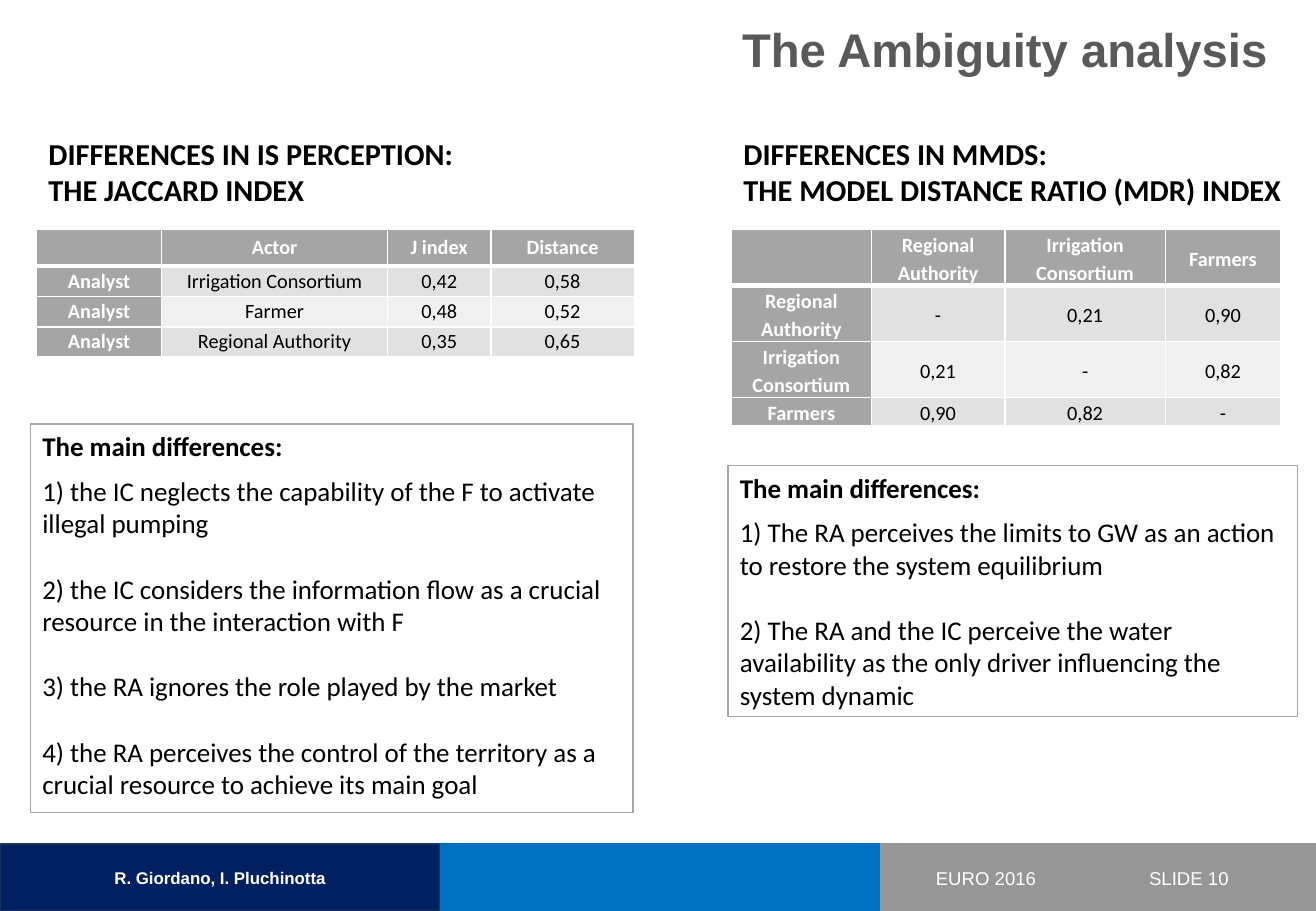
from dataclasses import dataclass

from lxml.etree import SubElement
from pptx import Presentation
from pptx.dml.color import RGBColor
from pptx.enum.shapes import MSO_SHAPE as Shp
from pptx.enum.text import MSO_ANCHOR as Anchor, PP_ALIGN as Align
from pptx.oxml.ns import qn
from pptx.util import Emu, Pt

PX = 9144
WHITE, BLACK, GREY = "FFFFFF", "000000", "A5A5A5"
BANDS = ("E1E1E1", "F0F0F0")


@dataclass(frozen=True)
class Box:
    x: int
    y: int
    w: int
    h: int

    def emu(self) -> list[Emu]:
        return [px(v) for v in (self.x, self.y, self.w, self.h)]


@dataclass(frozen=True)
class Font:
    size: int
    color: str = BLACK
    bold: bool = False
    name: str = "Calibri"


@dataclass(frozen=True)
class Bar:
    box: Box
    fill: str
    line: str
    text: str = ""


@dataclass(frozen=True)
class Heading:
    box: Box
    lines: tuple[str, ...]


@dataclass(frozen=True)
class Grid:
    x: int
    y: int
    cols: tuple[int, ...]
    rows: tuple[int, ...]
    spacing: float
    data: tuple[tuple[str, ...], ...]


@dataclass(frozen=True)
class Note:
    box: Box
    points: tuple[str, ...]


BARS = (
    Bar(Box(0, 695, 362, 55), "002060", "1A3260", "R. Giordano, I. Pluchinotta"),
    Bar(Box(363, 695, 362, 55), "0070C0", "0070C0"),
    Bar(Box(725, 695, 358, 55), "969696", "969696"),
)
FOOTERS = ("EURO 2016", "SLIDE 10")
HEADINGS = (
    Heading(Box(30, 106, 370, 71),
            ("DIFFERENCES IN IS PERCEPTION:", "THE JACCARD INDEX")),
    Heading(Box(602, 106, 481, 71),
            ("DIFFERENCES IN MMDS:", "THE MODEL DISTANCE RATIO (MDR) INDEX")),
)
GRIDS = (
    Grid(30, 189, (103, 186, 85, 118), (29, 25, 25, 25), 1.0, (
        ("", "Actor", "J index", "Distance"),
        ("Analyst", "Irrigation Consortium", "0,42", "0,58"),
        ("Analyst", "Farmer", "0,48", "0,52"),
        ("Analyst", "Regional Authority", "0,35", "0,65"),
    )),
    Grid(602, 189, (115, 110, 132, 95), (45, 45, 45, 22), 1.15, (
        ("", "Regional Authority", "Irrigation Consortium", "Farmers"),
        ("Regional Authority", "-", "0,21", "0,90"),
        ("Irrigation Consortium", "0,21", "-", "0,82"),
        ("Farmers", "0,90", "0,82", "-"),
    )),
)
NOTES = (
    Note(Box(25, 349, 496, 320), (
        "1) the IC neglects the capability of the F to activate illegal pumping",
        "2) the IC considers the information flow as a crucial resource in the interaction with F",
        "3) the RA ignores the role played by the market",
        "4) the RA perceives the control of the territory as a crucial resource to achieve its main goal",
    )),
    Note(Box(599, 383, 469, 207), (
        "1) The RA perceives the limits to GW as an action to restore the system equilibrium",
        "2) The RA and the IC perceive the water availability as the only driver influencing the system dynamic",
    )),
)


def px(n: int) -> Emu:
    return Emu(n * PX)


def rgb(color: str) -> RGBColor:
    return RGBColor.from_string(color)


def add_run(p, text: str, font: Font, align=Align.LEFT) -> None:
    p.alignment = align
    r = p.add_run()
    r.text = text
    f = r.font
    f.name, f.size, f.bold = font.name, Pt(font.size), font.bold
    f.color.rgb = rgb(font.color)


def add_rect(s, box: Box, line: str, width: float, fill: str = ""):
    sp = s.shapes.add_shape(Shp.RECTANGLE, *box.emu())
    sp.shadow.inherit = False
    if fill:
        sp.fill.solid()
        sp.fill.fore_color.rgb = rgb(fill)
    else:
        sp.fill.background()
    sp.line.color.rgb = rgb(line)
    sp.line.width = Pt(width)
    return sp


def add_text(s, box: Box, lines: tuple[str, ...], font: Font,
             align=Align.LEFT, anchor=Anchor.TOP) -> None:
    tf = s.shapes.add_textbox(*box.emu()).text_frame
    tf.word_wrap = True
    tf.vertical_anchor = anchor
    for i, line in enumerate(lines):
        add_run(tf.add_paragraph() if i else tf.paragraphs[0], line, font, align)


def add_borders(cell, top: int, bottom: int) -> None:
    tc_pr = cell._tc.get_or_add_tcPr()
    for i, (side, width) in enumerate((("L", 1), ("R", 1), ("T", top), ("B", bottom))):
        ln = SubElement(tc_pr, qn(f"a:ln{side}"), w=str(Pt(width)))
        fill = SubElement(ln, qn("a:solidFill"))
        SubElement(fill, qn("a:srgbClr"), val=WHITE)
        tc_pr.insert(i, ln)


def add_grid(s, grid: Grid) -> None:
    box = Box(grid.x, grid.y, sum(grid.cols), sum(grid.rows))
    table = s.shapes.add_table(len(grid.rows), len(grid.cols), *box.emu()).table
    for col, w in zip(table.columns, grid.cols):
        col.width = px(w)
    for i, (row, h) in enumerate(zip(table.rows, grid.rows)):
        row.height = px(h)
        for j, cell in enumerate(row.cells):
            head = i == 0 or j == 0
            cell.margin_left = cell.margin_right = px(7)
            cell.margin_top = cell.margin_bottom = 0
            cell.vertical_anchor = Anchor.MIDDLE
            cell.fill.solid()
            cell.fill.fore_color.rgb = rgb(GREY if head else BANDS[(i - 1) % 2])
            add_borders(cell, 3 if i == 1 else 1, 3 if i == 0 else 1)
            p = cell.text_frame.paragraphs[0]
            p.line_spacing = grid.spacing
            add_run(p, grid.data[i][j], Font(12, WHITE if head else BLACK, head),
                    Align.CENTER)


def add_note(s, note: Note) -> None:
    tf = add_rect(s, note.box, GREY, 0.75).text_frame
    tf.word_wrap = True
    tf.vertical_anchor = Anchor.TOP
    add_run(tf.paragraphs[0], "The main differences:", Font(16, bold=True))
    for i, point in enumerate(note.points):
        p = tf.add_paragraph()
        p.space_before = Pt(19.5 if i else 7.3)
        add_run(p, point, Font(16))


def main() -> None:
    prs = Presentation()
    prs.slide_width, prs.slide_height = px(1083), px(750)
    s = prs.slides.add_slide(prs.slide_layouts[5])

    title = s.shapes.title
    title.left, title.top, title.width, title.height = Box(169, 17, 884, 65).emu()
    tf = title.text_frame
    tf.vertical_anchor = Anchor.TOP
    tf.paragraphs[0].line_spacing = 0.9
    add_run(tf.paragraphs[0], "The Ambiguity analysis",
            Font(28, "595959", True, "Arial"), Align.RIGHT)

    for bar in BARS:
        sp = add_rect(s, bar.box, bar.line, 1, bar.fill)
        if bar.text:
            add_run(sp.text_frame.paragraphs[0], bar.text,
                    Font(10, WHITE, True, "Arial"), Align.CENTER)
    for i, text in enumerate(FOOTERS):
        add_text(s, Box(728 + i * 167, 695, 167, 55), (text,),
                 Font(11, WHITE, name="Arial"), Align.CENTER, Anchor.MIDDLE)
    for heading in HEADINGS:
        add_text(s, heading.box, heading.lines, Font(18, bold=True))
    for grid in GRIDS:
        add_grid(s, grid)
    for note in NOTES:
        add_note(s, note)
    prs.save("out.pptx")


if __name__ == "__main__":
    main()
